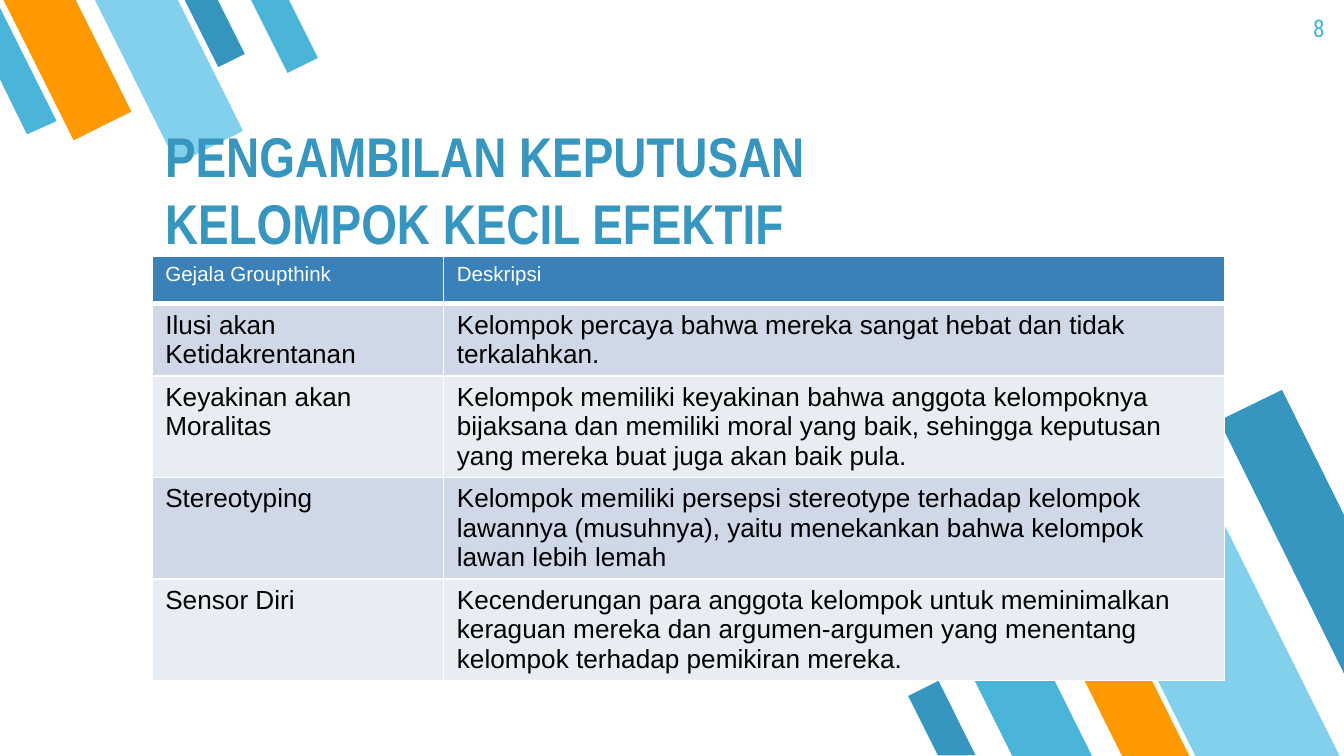
"""Builds the slide on symptoms of groupthink in small-group decisions."""
from lxml import etree
from pptx import Presentation
from pptx import util as u
from pptx.dml.color import RGBColor
from pptx.enum import shapes, text
from pptx.oxml import ns

WHITE = RGBColor(0xFF, 0xFF, 0xFF)
BLACK = RGBColor(0x00, 0x00, 0x00)
DARK_BLUE = RGBColor(0x37, 0x96, 0xBF)
BLUE = RGBColor(0x4B, 0xB5, 0xD9)
LIGHT_BLUE = RGBColor(0x81, 0xD1, 0xEC)
ORANGE = RGBColor(0xFF, 0x99, 0x00)
HEADER_BLUE = RGBColor(0x3A, 0x81, 0xBA)
ROW_FILLS = (RGBColor(0xCE, 0xD8, 0xE7), RGBColor(0xE8, 0xED, 0xF3))

BOTTOM_STRIPES = (
    (18.62, 11.43, 1.35, 3.35, BLUE),
    (21.67, 9.12, 2.44, 6.07, LIGHT_BLUE),
    (20.78, 11.89, 1.14, 2.82, ORANGE),
    (17.48, 12.93, 0.64, 1.57, DARK_BLUE),
)
TOP_STRIPES = (
    (3.78, -0.2, 0.56, 1.42, DARK_BLUE),
    (0.66, -0.46, 1.22, 3, ORANGE),
    (2.49, -0.51, 1.4, 3.48, LIGHT_BLUE),
    (5.05, -0.25, 0.64, 1.57, BLUE),
)
RIGHT_EDGE = ((24.23, 7.37), (23.04, 7.95), (25.4, 12.73), (25.4, 9.73))
LEFT_EDGE = ((0.51, 2.54), (1.07, 2.29), (0, 0.15), (0, 1.5))

SYMPTOMS = (
    ("Gejala Groupthink", "Deskripsi"),
    ("Ilusi akan Ketidakrentanan",
     "Kelompok percaya bahwa mereka sangat hebat dan tidak terkalahkan."),
    ("Keyakinan akan Moralitas",
     "Kelompok memiliki keyakinan bahwa anggota kelompoknya bijaksana dan memiliki "
     "moral yang baik, sehingga keputusan yang mereka buat juga akan baik pula."),
    ("Stereotyping",
     "Kelompok memiliki persepsi stereotype terhadap kelompok lawannya (musuhnya), "
     "yaitu menekankan bahwa kelompok lawan lebih lemah"),
    ("Sensor Diri",
     "Kecenderungan para anggota kelompok untuk meminimalkan keraguan mereka dan "
     "argumen-argumen yang menentang kelompok terhadap pemikiran mereka."),
)


class SlideBuilder:
    title_font = {"name": "Arial Narrow", "size": u.Pt(30), "bold": True}
    number_font = {"name": "Roboto Condensed", "size": u.Pt(13)}
    header_font = {"name": "Arial", "size": u.Pt(11), "bold": False}
    body_font = {"name": "Arial", "size": u.Pt(14), "bold": False}
    frame_format = {
        "word_wrap": True, "auto_size": text.MSO_AUTO_SIZE.NONE,
        **{f"margin_{side}": u.Cm(0.25) for side in ("left", "top", "right", "bottom")},
    }

    def __init__(self, slide):
        self.slide = slide

    def apply(self, target, values):
        for name, value in values.items():
            setattr(target, name, value)

    def set_text(self, frame, wording, font, color, alignment):
        paragraph = frame.paragraphs[0]
        paragraph.text = wording
        paragraph.alignment = alignment
        self.apply(paragraph.runs[0].font, font)
        paragraph.runs[0].font.color.rgb = color

    def paint(self, shape, color):
        shape.shadow.inherit = False
        shape.fill.solid()
        shape.fill.fore_color.rgb = color
        shape.line.fill.background()

    def stripe(self, left, top, width, height, color, rotation):
        shape = self.slide.shapes.add_shape(
            shapes.MSO_SHAPE.FLOWCHART_MANUAL_INPUT,
            u.Cm(left), u.Cm(top), u.Cm(width), u.Cm(height))
        shape.rotation = rotation
        shape.element.spPr.find(ns.qn("a:xfrm")).set("flipH", "1")
        self.paint(shape, color)

    def outline(self, points, color):
        start, *rest = [(u.Cm(x), u.Cm(y)) for x, y in points]
        builder = self.slide.shapes.build_freeform(*start)
        builder.add_line_segments(rest, close=True)
        self.paint(builder.convert_to_shape(), color)

    def title(self, wording, left, top, width, height):
        shape = self.slide.shapes.title
        self.apply(shape, {"left": u.Cm(left), "top": u.Cm(top),
                           "width": u.Cm(width), "height": u.Cm(height)})
        shape.element.getparent().append(shape.element)
        self.apply(shape.text_frame, self.frame_format)
        shape.text_frame.vertical_anchor = text.MSO_ANCHOR.BOTTOM
        self.set_text(shape.text_frame, wording, self.title_font, DARK_BLUE, text.PP_ALIGN.LEFT)

    def number(self, wording, left, top, width, height):
        box = self.slide.shapes.add_textbox(u.Cm(left), u.Cm(top), u.Cm(width), u.Cm(height))
        self.apply(box.text_frame, self.frame_format)
        self.set_text(box.text_frame, wording, self.number_font, BLUE, text.PP_ALIGN.RIGHT)

    def border(self, cell, side, points):
        properties = cell._tc.get_or_add_tcPr()
        line = etree.SubElement(properties, ns.qn(f"a:ln{side}"), w=str(u.Pt(points)))
        fill = etree.SubElement(line, ns.qn("a:solidFill"))
        etree.SubElement(fill, ns.qn("a:srgbClr"), val=str(WHITE))

    def table(self, rows, left, top, widths, heights):
        table = self.slide.shapes.add_table(
            len(rows), len(widths), u.Cm(left), u.Cm(top),
            u.Cm(sum(widths)), u.Cm(sum(heights))).table
        for column, width in zip(table.columns, widths):
            column.width = u.Cm(width)
        for index, (row, height, wordings) in enumerate(zip(table.rows, heights, rows)):
            row.height = u.Cm(height)
            header = index == 0
            for cell, wording in zip(row.cells, wordings):
                for side in "LRTB":
                    self.border(cell, side, 3 if header and side == "B" else 1)
                cell.fill.solid()
                cell.fill.fore_color.rgb = HEADER_BLUE if header else ROW_FILLS[(index - 1) % 2]
                self.set_text(cell.text_frame, wording,
                              self.header_font if header else self.body_font,
                              WHITE if header else BLACK, text.PP_ALIGN.LEFT)


def main():
    presentation = Presentation()
    presentation.slide_width = u.Cm(25.4)
    presentation.slide_height = u.Cm(14.29)
    builder = SlideBuilder(presentation.slides.add_slide(presentation.slide_layouts[5]))
    for stripe in BOTTOM_STRIPES:
        builder.stripe(*stripe, rotation=153.5)
    builder.outline(RIGHT_EDGE, DARK_BLUE)
    for stripe in TOP_STRIPES:
        builder.stripe(*stripe, rotation=333.5)
    builder.outline(LEFT_EDGE, BLUE)
    builder.title("PENGAMBILAN KEPUTUSAN KELOMPOK KECIL EFEKTIF", 2.87, 3.2, 16, 1.88)
    builder.number("8", 23.77, 0, 1.52, 1.09)
    builder.table(SYMPTOMS, 2.87, 4.85, (5.51, 14.76), (0.89, 1.36, 1.91, 1.91, 1.91))
    presentation.save("out.pptx")


if __name__ == "__main__":
    main()
